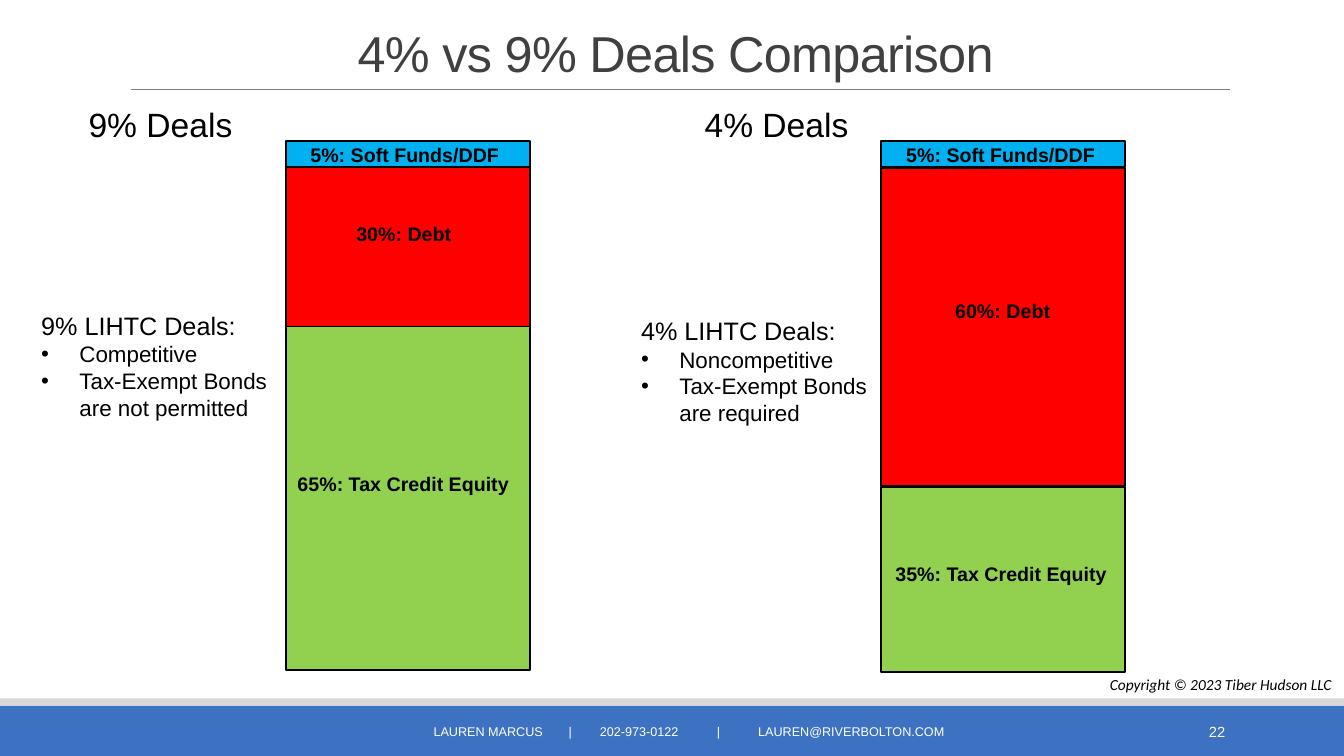
from dataclasses import dataclass

from lxml import etree
from pptx import Presentation
from pptx import util as u
from pptx.dml.color import RGBColor
from pptx.enum import shapes, text
from pptx.oxml import ns

Inches = u.Inches


@dataclass(frozen=True)
class Theme:
    font: str = "Arial"
    copyright_font: str = "Calibri"
    black: str = "000000"
    white: str = "FFFFFF"
    title: str = "404040"
    rule: str = "808080"
    footer: str = "3D71C1"
    footer_edge: str = "D8D8D8"
    soft_funds: str = "00B0F0"
    debt: str = "FF0000"
    equity: str = "92D050"
    title_size: float = 36
    heading_size: float = 24
    summary_size: float = 18
    bullet_size: float = 16
    label_size: float = 14
    copyright_size: float = 11
    number_size: float = 10.5
    contact_size: float = 9


theme = Theme()
LEFT, CENTER, RIGHT = text.PP_ALIGN.LEFT, text.PP_ALIGN.CENTER, text.PP_ALIGN.RIGHT
TOP, MIDDLE = text.MSO_ANCHOR.TOP, text.MSO_ANCHOR.MIDDLE

presentation = Presentation()
presentation.slide_width, presentation.slide_height = Inches(13.33), Inches(7.5)
slide = presentation.slides.add_slide(presentation.slide_layouts[6])


def add_block(box, fill, outlined=False):
    shape = slide.shapes.add_shape(shapes.MSO_SHAPE.RECTANGLE, *map(Inches, box))
    shape.shadow.inherit = False
    shape.fill.solid()
    shape.fill.fore_color.rgb = RGBColor.from_string(fill)
    if outlined:
        shape.line.color.rgb = RGBColor.from_string(theme.black)
        shape.line.width = u.Pt(1.25)
    else:
        shape.line.fill.background()


def add_text(box, lines, size, color=theme.black, align=LEFT, anchor=TOP,
             bold=False, italic=False, font=theme.font, bullet_size=None, tabs=()):
    """Write lines in a box; with bullet_size, all lines after the first are bullets."""
    frame = slide.shapes.add_textbox(*map(Inches, box)).text_frame
    frame.word_wrap = True
    frame.vertical_anchor = anchor
    for index, line in enumerate(lines):
        paragraph = frame.paragraphs[0] if index == 0 else frame.add_paragraph()
        paragraph.add_run().text = line
        paragraph.alignment = align
        properties = paragraph._p.get_or_add_pPr()
        bulleted = bullet_size is not None and index > 0
        if bulleted:
            properties.set("marL", str(Inches(0.38)))
            properties.set("indent", str(-Inches(0.38)))
            etree.SubElement(properties, ns.qn("a:buFont")).set("typeface", theme.font)
            etree.SubElement(properties, ns.qn("a:buChar")).set("char", "•")
        if tabs:
            tab_list = etree.SubElement(properties, ns.qn("a:tabLst"))
            for position in tabs:
                tab = etree.SubElement(tab_list, ns.qn("a:tab"))
                tab.set("pos", str(Inches(position)))
                tab.set("algn", "l")
        paragraph.font.name = font
        paragraph.font.size = u.Pt(bullet_size if bulleted else size)
        paragraph.font.bold = bold
        paragraph.font.italic = italic
        paragraph.font.color.rgb = RGBColor.from_string(color)
    return frame


# Footer bands and title rule
add_block((0, 7, 13.33, 0.5), theme.footer)
add_block((0, 6.93, 13.33, 0.07), theme.footer_edge)
rule = slide.shapes.add_connector(
    shapes.MSO_CONNECTOR.STRAIGHT, Inches(1.3), Inches(0.89), Inches(12.2), Inches(0.89))
rule.line.color.rgb = RGBColor.from_string(theme.rule)
rule.line.width = u.Pt(0.5)
etree.SubElement(rule._element.spPr, ns.qn("a:effectLst"))

# Title
title = add_text((1.2, 0.31, 11, 0.52), ["4% vs 9% Deals Comparison"],
                 theme.title_size, theme.title, CENTER, MIDDLE).paragraphs[0]
title.line_spacing = 0.85
title.runs[0]._r.get_or_add_rPr().set("spc", "-50")

# Deals: heading, stacked bar (top, height, fill, label, label box), summary
deals = [
    ("9% Deals", 0.78, 2.84, [
        (1.66, 1.58, theme.debt, "30%: Debt", (3.11, 2.15, 1.79, 0.34)),
        (1.4, 0.26, theme.soft_funds, "5%: Soft Funds/DDF", (2.87, 1.37, 2.29, 0.34)),
        (3.24, 3.41, theme.equity, "65%: Tax Credit Equity", (2.82, 4.63, 2.36, 0.34)),
    ], (0.31, 3.03, 2.48, 1.21),
     ["9% LIHTC Deals:", "Competitive", "Tax-Exempt Bonds are not permitted"]),
    ("4% Deals", 6.89, 8.74, [
        (1.67, 3.15, theme.debt, "60%: Debt", (9.05, 2.92, 1.79, 0.34)),
        (1.4, 0.26, theme.soft_funds, "5%: Soft Funds/DDF", (8.74, 1.37, 2.37, 0.34)),
        (4.83, 1.84, theme.equity, "35%: Tax Credit Equity", (8.75, 5.53, 2.36, 0.34)),
    ], (6.26, 3.08, 2.48, 1.21),
     ["4% LIHTC Deals:", "Noncompetitive", "Tax-Exempt Bonds are required"]),
]
for heading, heading_left, bar_left, segments, summary_box, summary in deals:
    add_text((heading_left, 0.98, 2.67, 0.5), [heading], theme.heading_size)
    for top, height, fill, label, label_box in segments:
        add_block((bar_left, top, 2.42, height), fill, outlined=True)
    for top, height, fill, label, label_box in segments:
        add_text(label_box, [label], theme.label_size, align=CENTER, bold=True)
    add_text(summary_box, summary, theme.summary_size, bullet_size=theme.bullet_size)

# Copyright, contact line and slide number
copyright_frame = add_text((10.91, 6.65, 2.42, 0.29), ["Copyright © 2023 Tiber Hudson LLC"],
                           theme.copyright_size, italic=True, font=theme.copyright_font)
copyright_frame.word_wrap = False
contact = add_text((4.03, 7.06, 5.63, 0.4),
                   ["LAUREN MARCUS\t|\t202-973-0122\t|\tLAUREN@RIVERBOLTON.COM"],
                   theme.contact_size, theme.white, anchor=MIDDLE,
                   tabs=(1.34, 1.65, 2.81, 3.22))
contact.margin_left = Inches(0.27)
add_text((10.82, 7.06, 1.43, 0.4), ["22"], theme.number_size, theme.white, RIGHT, MIDDLE)

presentation.save("out.pptx")
